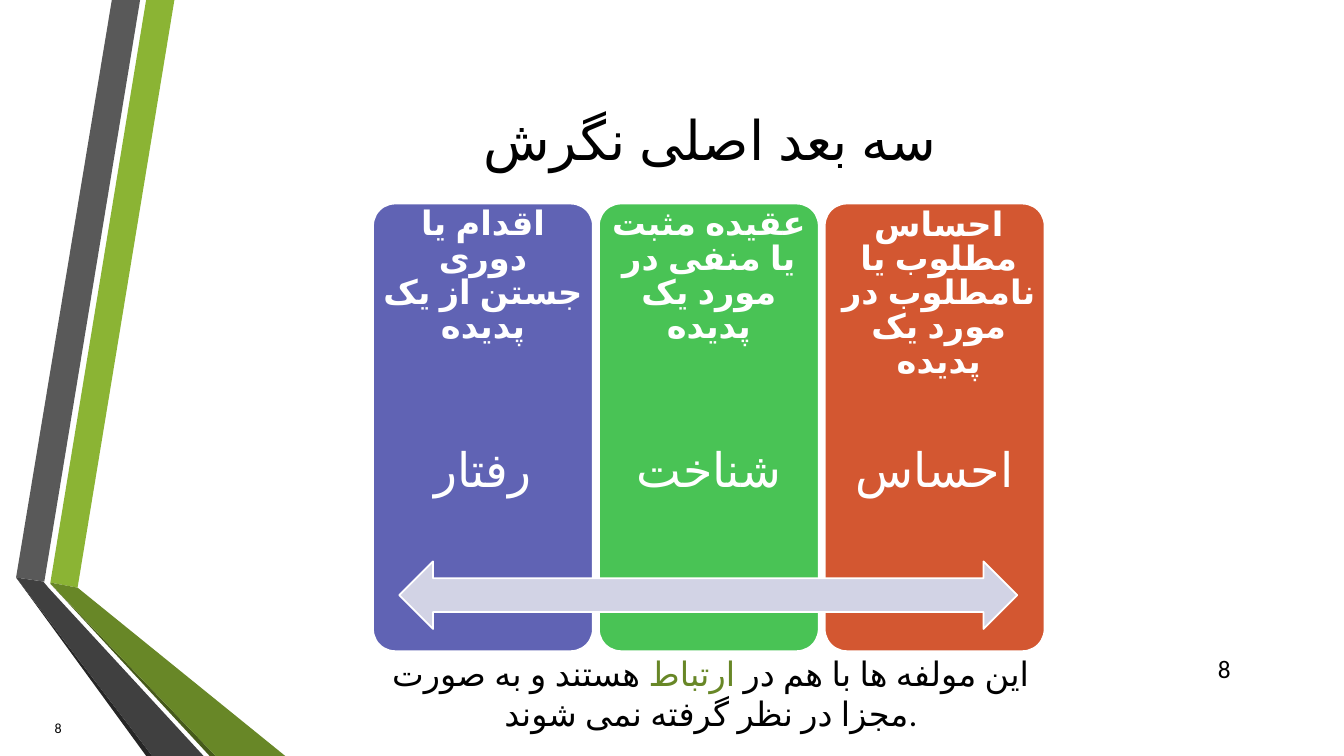
from pptx import Presentation
from pptx import util as u
from pptx.dml.color import RGBColor
from pptx.enum import lang, shapes, text

# The grid has square cells of one inch: x in columns, y in rows
COLS, ROWS = 13.33, 7.5
FONT, LABEL_FONT = "Calibri", "Arial"
BLACK, WHITE, OLIVE = "000000", "FFFFFF", "688727"

# Ribbon on the left edge: colour and corner points
RIBBON = [
    ("8BB434", [(0.5, 5.78), (0.77, 5.83), (1.73, 0), (1.45, 0)]),
    ("595959", [(1.39, 0), (1.11, 0), (0.16, 5.73), (0.44, 5.77)]),
    ("262626", [(0.16, 5.73), (1.45, ROWS), (1.51, ROWS)]),
    ("465A1A", [(0.5, 5.79), (2.08, ROWS), (2.14, ROWS)]),
    (OLIVE, [(0.5, 5.79), (2.14, ROWS), (2.83, ROWS), (0.77, 5.83),
             (0.5, 5.78)]),
    ("404040", [(2.02, ROWS), (0.48, 5.83), (0.43, 5.77), (0.16, 5.73),
                (1.51, ROWS)]),
]

# Panels: colour, name, description, shift and height of the description
PANELS = [
    ("6063B4", "رفتار", "اقدام یا دوری جستن از یک پدیده", 0, 1.13),
    ("49C355", "شناخت", "عقیده مثبت یا منفی در مورد یک پدیده", 0, 1.47),
    ("D35731", "احساس", "احساس مطلوب یا نامطلوب در مورد یک پدیده", 0.04, 1.82),
]
PANEL_LEFT, PANEL_TOP, PANEL_W, PANEL_H, PITCH = 3.7, 2.02, 2.18, 4.44, 2.24


def rgb(value):
    return RGBColor.from_string(value)


def cells(*values):
    return [u.Inches(v) for v in values]


def paint(sp, fill, line=None):
    sp.shadow.inherit = False
    sp.fill.solid()
    sp.fill.fore_color.rgb = rgb(fill)
    if line:
        sp.line.color.rgb = rgb(line)
        sp.line.width = u.Pt(1.25)
    else:
        sp.line.fill.background()


def write(sp, runs, size, font=FONT, align="CENTER", anchor="MIDDLE",
          bold=False, spacing=None, rtl=False):
    """Fill one paragraph with (text, colour) runs."""
    tf = sp.text_frame
    tf.word_wrap = True
    tf.vertical_anchor = text.MSO_ANCHOR[anchor]
    p = tf.paragraphs[0]
    p.alignment = text.PP_ALIGN[align]
    if spacing:
        p.line_spacing = spacing
    if rtl:
        p._p.get_or_add_pPr().set("rtl", "1")
    for words, color in runs:
        r = p.add_run()
        r.text = words
        r.font.size = u.Pt(size)
        r.font.bold = bold
        r.font.color.rgb = rgb(color)
        r.font.name = font
        r.font.language_id = lang.MSO_LANGUAGE_ID.FARSI


def add_text(s, at, runs, size, **style):
    write(s.shapes.add_textbox(*cells(*at)), runs, size, **style)


def add_band(s, fill, points):
    start, *rest = [cells(*pt) for pt in points]
    builder = s.shapes.build_freeform(*start)
    builder.add_line_segments(rest, close=True)
    paint(builder.convert_to_shape(), fill)


def add_panel(s, left, fill, name):
    sp = s.shapes.add_shape(shapes.MSO_SHAPE.ROUNDED_RECTANGLE,
                            *cells(left, PANEL_TOP, PANEL_W, PANEL_H))
    sp.adjustments[0] = 0.1
    paint(sp, fill, WHITE)
    tf = sp.text_frame
    tf.margin_left = tf.margin_right = u.Inches(0.2)
    tf.margin_top, tf.margin_bottom = cells(1.98, 1.09)
    write(sp, [(name, WHITE)], 34, spacing=0.9)


def main():
    prs = Presentation()
    prs.slide_width, prs.slide_height = cells(COLS, ROWS)
    s = prs.slides.add_slide(prs.slide_layouts[6])

    # Ribbon and slide numbers
    for fill, points in RIBBON:
        add_band(s, fill, points)
    add_text(s, (0.11, 7.02, 0.6, 0.4), [("8", BLACK)], 10, align="RIGHT")
    add_text(s, (11.98, 6.43, 0.6, 0.4), [("8", BLACK)], 18, align="LEFT",
             anchor="TOP")

    # Title and closing sentence
    add_text(s, (2.83, 1, 8.43, 0.75), [("سه بعد اصلی نگرش", BLACK)], 39)
    add_text(s, (PANEL_LEFT, 6.5, 6.7, 0.75),
             [("این مولفه ها با هم در ", BLACK), ("ارتباط", OLIVE),
              (" هستند و به صورت مجزا در نظر گرفته نمی شوند.", BLACK)], 24)

    # Panels, the arrow across them, then their descriptions
    lefts = [PANEL_LEFT + i * PITCH for i in range(len(PANELS))]
    for left, (fill, name, *_) in zip(lefts, PANELS):
        add_panel(s, left, fill, name)
    arrow = s.shapes.add_shape(shapes.MSO_SHAPE.LEFT_RIGHT_ARROW,
                               *cells(3.96, 5.57, 6.13, 0.67))
    paint(arrow, "D2D3E5", WHITE)
    for left, (_, _, words, shift, height) in zip(lefts, PANELS):
        add_text(s, (left + shift, PANEL_TOP, PANEL_W, height),
                 [(words, WHITE)], 24, font=LABEL_FONT, anchor="TOP",
                 bold=True, spacing=0.85, rtl=True)

    prs.save("out.pptx")


if __name__ == "__main__":
    main()
